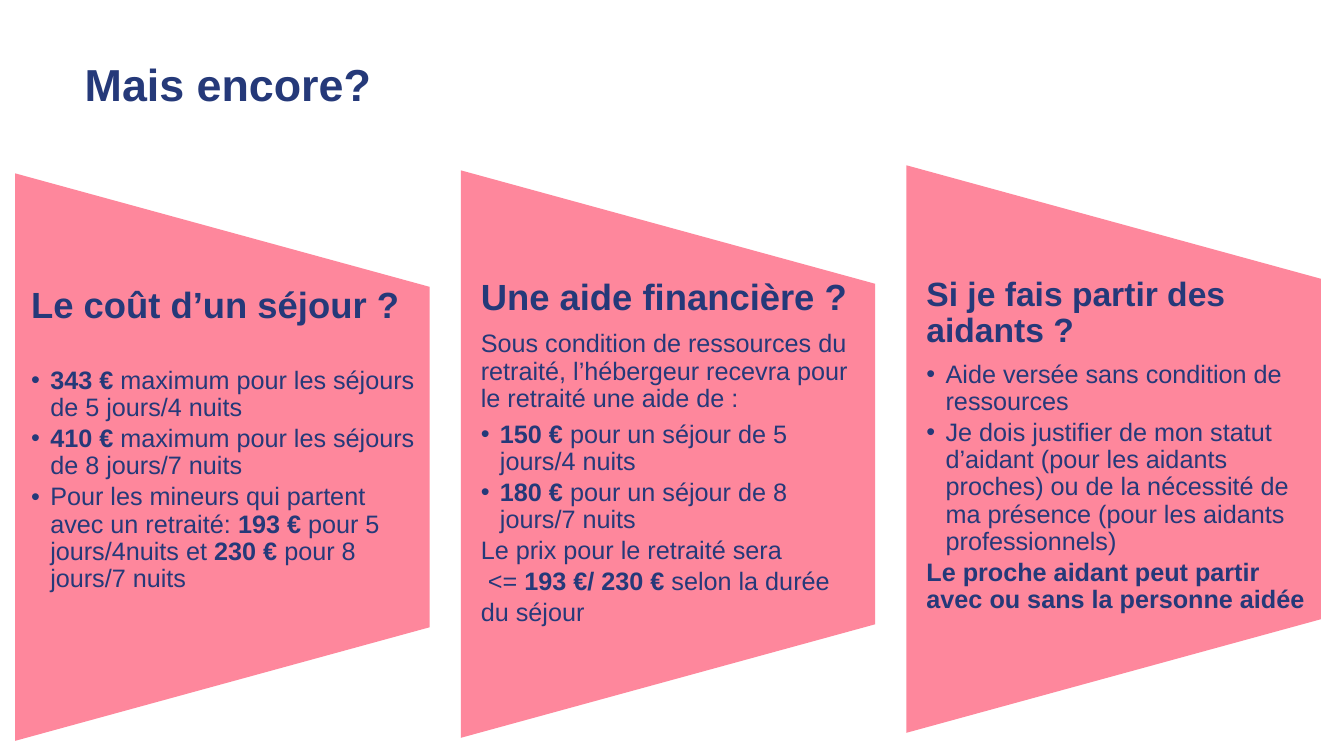
from lxml.etree import SubElement
from pptx import Presentation
from pptx.dml.color import RGBColor
from pptx.enum.text import MSO_ANCHOR, PP_ALIGN
from pptx.oxml.ns import qn
from pptx.util import Emu, Inches, Pt

WIDTH, HEIGHT = 13.33, 7.5
NAVY, PINK = "253979", "FE879C"
FIRST_LEFT, PITCH = 0.15, 4.42
PANEL_W, PANEL_H = 4.11, 5.63
SLOPE = PANEL_H / 5

COLUMNS = [
    {
        "top": 1.72, "text_left": 0.21, "text_top": 2.75,
        "heading": ("Le coût d’un séjour ?", 26, 1.0, 30),
        "body": [
            ("bullet", [("343 €", True), (" maximum pour les séjours de 5 jours/4 nuits", False)]),
            ("bullet", [("410 €", True), (" maximum pour les séjours de 8 jours/7 nuits", False)]),
            ("bullet", [("Pour les mineurs qui partent avec un retraité: ", False), ("193 €", True),
                        (" pour 5 jours/4nuits et ", False), ("230 €", True),
                        (" pour 8 jours/7 nuits", False)]),
        ],
    },
    {
        "top": 1.69, "text_left": 4.67, "text_top": 2.72,
        "heading": ("Une aide financière ?", 26, 0.9, 9.1),
        "body": [
            ("intro", [("Sous condition de ressources du retraité, l’hébergeur recevra "
                        "pour le retraité une aide de :", False)]),
            ("bullet", [("150 €", True), (" pour un séjour de 5 jours/4 nuits", False)]),
            ("bullet", [("180 €", True), (" pour un séjour de 8 jours/7 nuits", False)]),
            ("plain", [("Le prix pour le retraité sera", False)]),
            ("shifted", [("<= ", False), ("193 €/ 230 €", True), (" selon la durée", False)]),
            ("plain", [("du séjour", False)]),
        ],
    },
    {
        "top": 1.64, "text_left": 9.09, "text_top": 2.7,
        "heading": ("Si je fais partir des aidants ?", 24, 0.9, 8.4),
        "body": [
            ("bullet", [("Aide versée sans condition de ressources", False)]),
            ("bullet", [("Je dois justifier de mon statut d’aidant (pour les aidants proches) "
                         "ou de la nécessité de ma présence (pour les aidants professionnels)", False)]),
            ("plain", [("Le proche aidant peut partir avec ou sans la personne aidée", True)]),
        ],
    },
]


def color(value):
    return RGBColor.from_string(value)


def add_run(p, text, size, bold):
    r = p.add_run()
    r.text = text
    r.font.name = "Arial"
    r.font.size = Pt(size)
    r.font.bold = bold
    r.font.color.rgb = color(NAVY)


def space(p, line, after):
    p.alignment = PP_ALIGN.LEFT
    p.line_spacing = line
    p.space_before = Pt(0)
    p.space_after = Pt(after)


def indent(p, left, bullet=False):
    pPr = p._p.get_or_add_pPr()
    pPr.set("marL", str(Inches(left)))
    pPr.set("indent", str(-Inches(left) if bullet else 0))
    if bullet:
        SubElement(pPr, qn("a:buFont")).set("typeface", "Arial")
        SubElement(pPr, qn("a:buChar")).set("char", "•")


def add_title(s, text):
    title = s.shapes.title
    title.left, title.top = Inches(0.74), Inches(0.47)
    title.width, title.height = Inches(11.5), Inches(0.78)
    tf = title.text_frame
    tf.vertical_anchor = MSO_ANCHOR.MIDDLE
    p = tf.paragraphs[0]
    space(p, 0.9, 0)
    add_run(p, text, 32, True)


def add_panel(s, left, top):
    right, bottom = left + PANEL_W, top + PANEL_H
    outline = s.shapes.build_freeform(Inches(left), Inches(bottom))
    corners = [(left, top), (right, top + SLOPE), (right, bottom - SLOPE)]
    outline.add_line_segments([(Inches(x), Inches(y)) for x, y in corners])
    sp = outline.convert_to_shape(Emu(0), Emu(0))
    sp.shadow.inherit = False
    sp.fill.solid()
    sp.fill.fore_color.rgb = color(PINK)
    sp.line.fill.background()


def add_text(s, column):
    top = column["text_top"]
    box = s.shapes.add_textbox(Inches(column["text_left"]), Inches(top),
                               Inches(4.02), Inches(column["top"] + PANEL_H - top))
    tf = box.text_frame
    tf.word_wrap = True
    heading, size, line, after = column["heading"]
    p = tf.paragraphs[0]
    space(p, line, after)
    add_run(p, heading, size, True)
    for kind, runs in column["body"]:
        p = tf.add_paragraph()
        if kind == "bullet":
            indent(p, 0.19, bullet=True)
        elif kind == "shifted":
            indent(p, 0.07)
        space(p, 0.9, 6.3 if kind == "intro" else 2.7)
        for text, bold in runs:
            add_run(p, text, 18, bold)


def main():
    prs = Presentation()
    prs.slide_width, prs.slide_height = Inches(WIDTH), Inches(HEIGHT)
    s = prs.slides.add_slide(prs.slide_layouts[5])
    add_title(s, "Mais encore?")
    for i, column in enumerate(COLUMNS):
        add_panel(s, FIRST_LEFT + i * PITCH, column["top"])
        add_text(s, column)
    prs.save("out.pptx")


if __name__ == "__main__":
    main()
